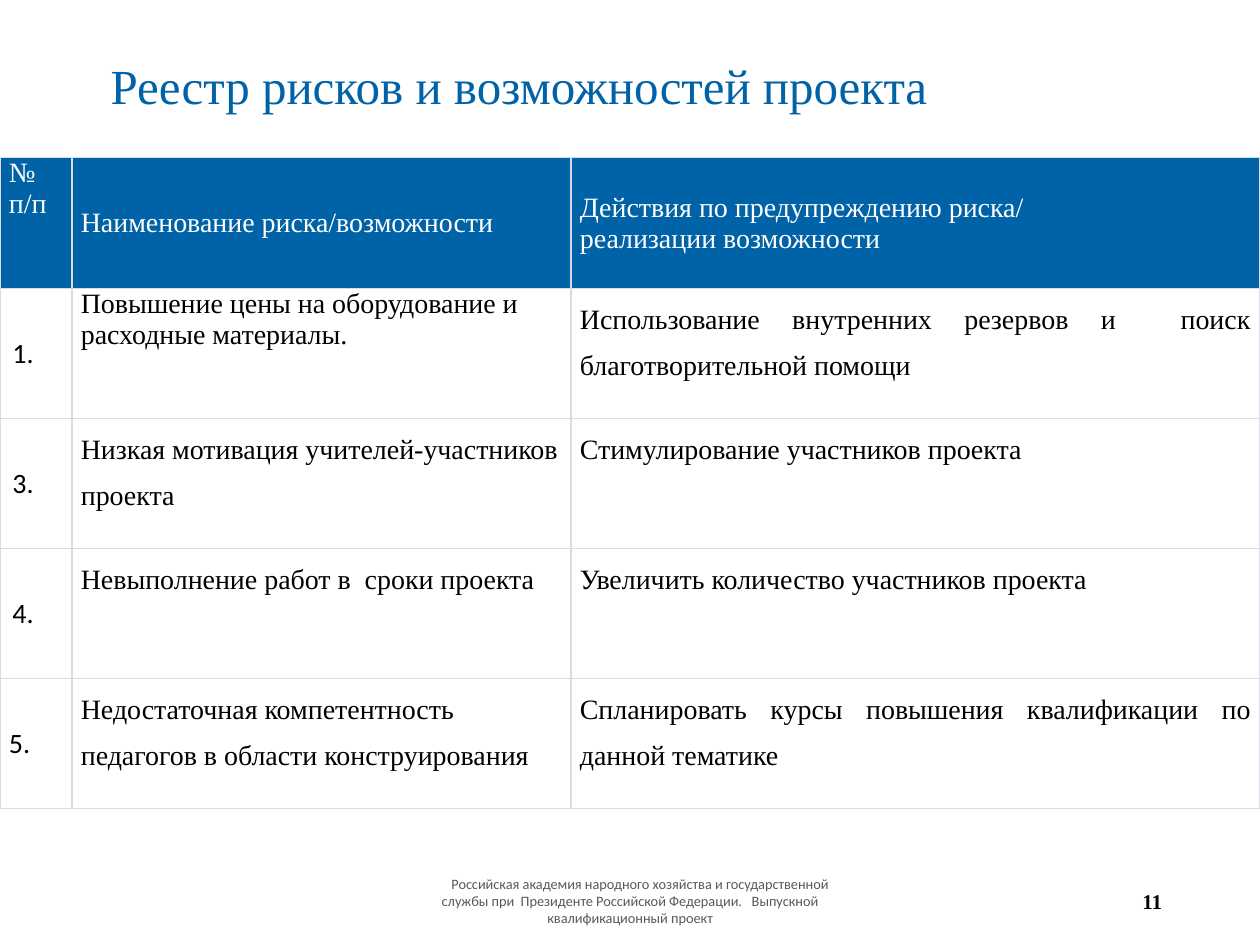
import pptx
import pptx.dml.color
import pptx.enum.text
import pptx.oxml
import pptx.oxml.ns
import pptx.util
from pptx.util import Cm

ALIGN = pptx.enum.text.PP_ALIGN
ANCHOR = pptx.enum.text.MSO_ANCHOR
SERIF, SANS = "Times New Roman", "Calibri"
BLUE, WHITE, BLACK, GREY, BORDER = "0062A7", "FFFFFF", "000000", "595959", "D8DCE5"


def color(hex_string):
    return pptx.dml.color.RGBColor.from_string(hex_string)


def write(frame, text, font=SERIF, size=16, ink=BLACK, bold=False,
          align=ALIGN.LEFT, spacing=1.0, after=0, indent=0):
    """Fill a text frame, one paragraph per line of text."""
    frame.word_wrap = True
    for index, line in enumerate(text.split("\n")):
        paragraph = frame.add_paragraph() if index else frame.paragraphs[0]
        paragraph.alignment = align
        paragraph.line_spacing = spacing
        paragraph.space_after = pptx.util.Pt(after)
        if indent:
            paragraph._p.get_or_add_pPr().set("indent", str(Cm(indent)))
        run = paragraph.add_run()
        run.text = line
        run.font.name = font
        run.font.size = pptx.util.Pt(size)
        run.font.bold = bold
        run.font.color.rgb = color(ink)


class RiskSlide:
    def __init__(self, deck):
        self.slide = deck.slides.add_slide(deck.slide_layouts[6])

    def text(self, left, top, width, height, text, **style):
        box = self.slide.shapes.add_textbox(Cm(left), Cm(top), Cm(width), Cm(height))
        box.text_frame.vertical_anchor = ANCHOR.MIDDLE
        write(box.text_frame, text, **style)

    def table(self, left, top, widths, heights):
        frame = self.slide.shapes.add_table(
            len(heights), len(widths), Cm(left), Cm(top), Cm(sum(widths)), Cm(sum(heights)))
        for column, width in zip(frame.table.columns, widths):
            column.width = Cm(width)
        for row, height in zip(frame.table.rows, heights):
            row.height = Cm(height)
        return frame.table

    def cell(self, cell, text, fill=WHITE, anchor=ANCHOR.TOP, side=0.18, edge=0, **style):
        cell.margin_left = cell.margin_right = Cm(side)
        cell.margin_top = cell.margin_bottom = Cm(edge)
        cell.vertical_anchor = anchor
        write(cell.text_frame, text, **style)
        properties = cell._tc.get_or_add_tcPr()
        for border in ("lnL", "lnR", "lnT", "lnB"):
            properties.append(pptx.oxml.parse_xml(
                f'<a:{border} {pptx.oxml.ns.nsdecls("a")} w="12700"><a:solidFill>'
                f'<a:srgbClr val="{BORDER}"/></a:solidFill></a:{border}>'))
        cell.fill.solid()
        cell.fill.fore_color.rgb = color(fill)


HEADERS = [
    ("№\nп/п", ANCHOR.TOP),
    ("Наименование риска/возможности", ANCHOR.MIDDLE),
    ("Действия по предупреждению риска/\nреализации возможности", ANCHOR.MIDDLE),
]
RISKS = [
    ("1.", "Повышение цены на оборудование и расходные материалы.",
     "Использование внутренних резервов и  поиск благотворительной помощи"),
    ("3.", "Низкая мотивация учителей-участников проекта",
     "Стимулирование участников проекта"),
    ("4.", "Невыполнение работ в  сроки проекта",
     "Увеличить количество участников проекта"),
    ("5.", "Недостаточная компетентность педагогов в области конструирования",
     "Спланировать курсы повышения квалификации по данной тематике"),
]


def main():
    deck = pptx.Presentation()
    deck.slide_width, deck.slide_height = Cm(25.4), Cm(19.05)
    page = RiskSlide(deck)

    # Title
    page.text(1.98, 0.64, 21.31, 2.29, "Реестр рисков и возможностей проекта",
              size=28, ink=BLUE, spacing=0.9)

    # Risk register: header row
    register = page.table(0, 3.18, [1.45, 10.06, 13.89], [2.64] + [2.62] * len(RISKS))
    for column, (header, anchor) in enumerate(HEADERS):
        page.cell(register.cell(0, column), header, fill=BLUE, anchor=anchor, ink=WHITE)

    # Risk register: the first risk is set solid, the last number has narrow margins
    loose = dict(spacing=1.5, after=10)
    for row, (number, risk, action) in enumerate(RISKS, start=1):
        margins = {} if row == len(RISKS) else dict(side=0.25, edge=0.13)
        page.cell(register.cell(row, 0), number, anchor=ANCHOR.MIDDLE, font=SANS, **margins)
        page.cell(register.cell(row, 1), risk, **({} if row == 1 else loose))
        page.cell(register.cell(row, 2), action, align=ALIGN.JUSTIFY, **loose)

    # Footer and page number
    page.text(8.41, 17.65, 8.59, 1.02,
              "Российская академия народного хозяйства и государственной службы при  "
              "Президенте Российской Федерации.   Выпускной квалификационный проект",
              font=SANS, size=8.2, ink=GREY, align=ALIGN.CENTER, indent=0.4)
    page.text(17.96, 17.65, 5.72, 1.02, "11", size=12, bold=True, align=ALIGN.RIGHT)

    deck.save("out.pptx")


if __name__ == "__main__":
    main()
